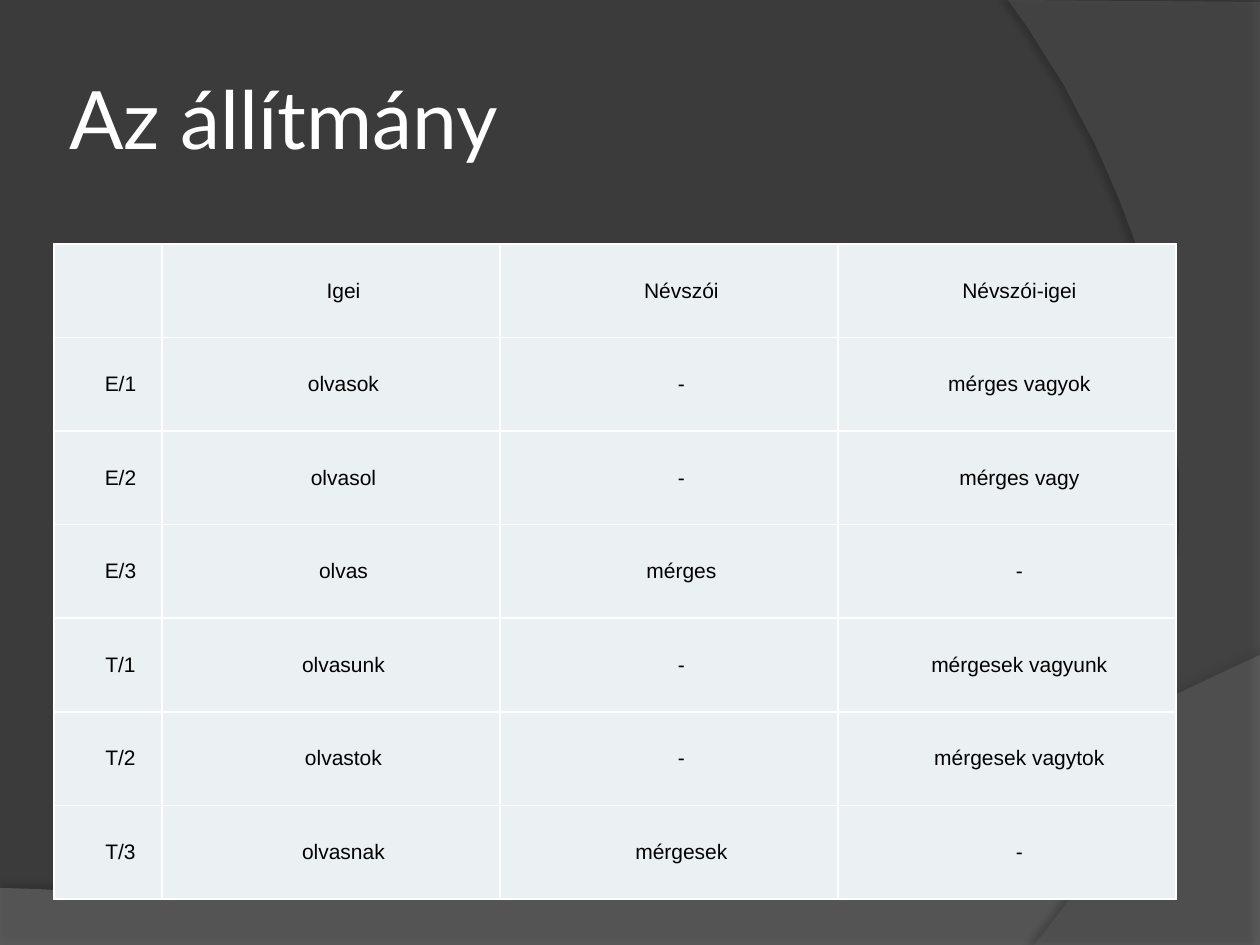
import dataclasses

import lxml.etree
import pptx
import pptx.dml.color
import pptx.enum.text
import pptx.oxml
import pptx.oxml.ns
import pptx.util

PX = pptx.util.Inches(1) / 126
PAGE_W, PAGE_H = 1260, 945
TITLE = "Az állítmány"
ROWS = [
    ("", "Igei", "Névszói", "Névszói-igei"),
    ("E/1", "olvasok", "-", "mérges vagyok"),
    ("E/2", "olvasol", "-", "mérges vagy"),
    ("E/3", "olvas", "mérges", "-"),
    ("T/1", "olvasunk", "-", "mérgesek vagyunk"),
    ("T/2", "olvastok", "-", "mérgesek vagytok"),
    ("T/3", "olvasnak", "mérgesek", "-"),
]


@dataclasses.dataclass(frozen=True)
class Theme:
    background: str = "3B3B3B"
    wave: str = "7F7F7F"
    arc: str = "5E5E5E"
    shadow: str = "000000"
    title: str = "FFFFFF"
    cell: str = "EBF0F2"
    border: str = "FFFFFF"
    text: str = "000000"
    title_font: str = "Lato"
    text_font: str = "Arial"
    title_size: int = 46
    text_size: int = 12


THEME = Theme()


def px(length):
    return pptx.util.Emu(round(length * PX))


def rgb(value):
    return pptx.dml.color.RGBColor.from_string(value)


def paint(fill, color):
    fill.solid()
    fill.fore_color.rgb = rgb(color)


def format_font(font, name, size, color):
    font.name = name
    font.size = pptx.util.Pt(size)
    font.bold = False
    font.color.rgb = rgb(color)


def add_child(parent, tag, **attributes):
    child = lxml.etree.SubElement(parent, pptx.oxml.ns.qn(tag))
    for name, value in attributes.items():
        child.set(name, str(value))
    return child


def add_color(parent, color, alpha):
    """Append a colour with its opacity in percent."""
    add_child(add_child(parent, "a:srgbClr", val=color), "a:alpha", val=alpha * 1000)


def bezier(start, control1, control2, end, steps=40):
    """Return points along a cubic curve, both ends included."""
    points = []
    for step in range(steps + 1):
        t = step / steps
        weights = ((1 - t) ** 3, 3 * t * (1 - t) ** 2, 3 * t * t * (1 - t), t ** 3)
        points.append(tuple(
            sum(weight * value for weight, value in zip(weights, axis))
            for axis in zip(start, control1, control2, end)
        ))
    return points


def add_backdrop(page, points, color, opacity, shadow_opacity, distance, angle):
    """Add a translucent outline with a soft shadow."""
    builder = page.shapes.build_freeform(*points[0], scale=PX)
    builder.add_line_segments(points[1:], close=True)
    shape = builder.convert_to_shape()
    shape.line.fill.background()
    paint(shape.fill, color)
    properties = shape.element.spPr
    fill_color = properties.find(".//" + pptx.oxml.ns.qn("a:solidFill"))[0]
    add_child(fill_color, "a:alpha", val=opacity * 1000)
    shadow = add_child(
        add_child(properties, "a:effectLst"), "a:outerShdw",
        blurRad=pptx.util.Pt(4), dist=pptx.util.Pt(distance),
        dir=angle * 60000, algn="ctr", rotWithShape=0,
    )
    add_color(shadow, THEME.shadow, shadow_opacity)


def format_title(page):
    title = page.shapes.title
    title.left, title.top, title.width, title.height = map(px, (63, 38, 1029, 158))
    frame = title.text_frame
    frame.text = TITLE
    frame.vertical_anchor = pptx.enum.text.MSO_ANCHOR.MIDDLE
    frame.margin_left = frame.margin_right = px(6)
    frame.margin_top = frame.margin_bottom = px(6)
    para = frame.paragraphs[0]
    para.alignment = pptx.enum.text.PP_ALIGN.LEFT
    format_font(para.runs[0].font, THEME.title_font, THEME.title_size, THEME.title)
    page.shapes.element.append(title.element)  # in front of the backdrop


def format_cell(cell, text):
    cell.text = text
    cell.vertical_anchor = pptx.enum.text.MSO_ANCHOR.MIDDLE
    cell.margin_left = cell.margin_right = px(6)
    cell.margin_top = cell.margin_bottom = 0
    properties = cell._tc.get_or_add_tcPr()
    for side in ("a:lnL", "a:lnR", "a:lnT", "a:lnB"):
        line = add_child(properties, side, w=pptx.util.Pt(1))
        add_child(add_child(line, "a:solidFill"), "a:srgbClr", val=THEME.border)
    paint(cell.fill, THEME.cell)
    para = cell.text_frame.paragraphs[0]
    para.alignment = pptx.enum.text.PP_ALIGN.CENTER
    indent = para._p.get_or_add_pPr()
    indent.set("marL", "0")
    indent.set("indent", str(px(25)))
    for span in para.runs:
        format_font(span.font, THEME.text_font, THEME.text_size, THEME.text)


def add_verb_table(page):
    widths = (108, 338, 338, 338)
    box = (54, 244, sum(widths), 655)
    table = page.shapes.add_table(len(ROWS), len(widths), *map(px, box)).table
    table.first_row = table.horz_banding = False
    for column, width in zip(table.columns, widths):
        column.width = px(width)
    for row, texts in zip(table.rows, ROWS):
        for cell, text in zip(row.cells, texts):
            format_cell(cell, text)


def main():
    deck = pptx.Presentation()
    deck.slide_width, deck.slide_height = px(PAGE_W), px(PAGE_H)
    page = deck.slides.add_slide(deck.slide_layouts[5])
    paint(page.background.fill, THEME.background)
    wave = [(0, PAGE_H), (PAGE_W, PAGE_H)]
    wave += bezier((PAGE_W, 655), (704, 919), (493, 906), (0, 888))
    add_backdrop(page, wave, THEME.wave, 45, 35, 3.5, 270)
    arc = [(PAGE_W, 2), (PAGE_W, PAGE_H)]
    arc += bezier((1034, PAGE_H), (1178, 780), (1283, 378), (1008, 0))
    add_backdrop(page, arc, THEME.arc, 40, 45, 4, 180)
    format_title(page)
    add_verb_table(page)
    deck.save("out.pptx")


if __name__ == "__main__":
    main()
